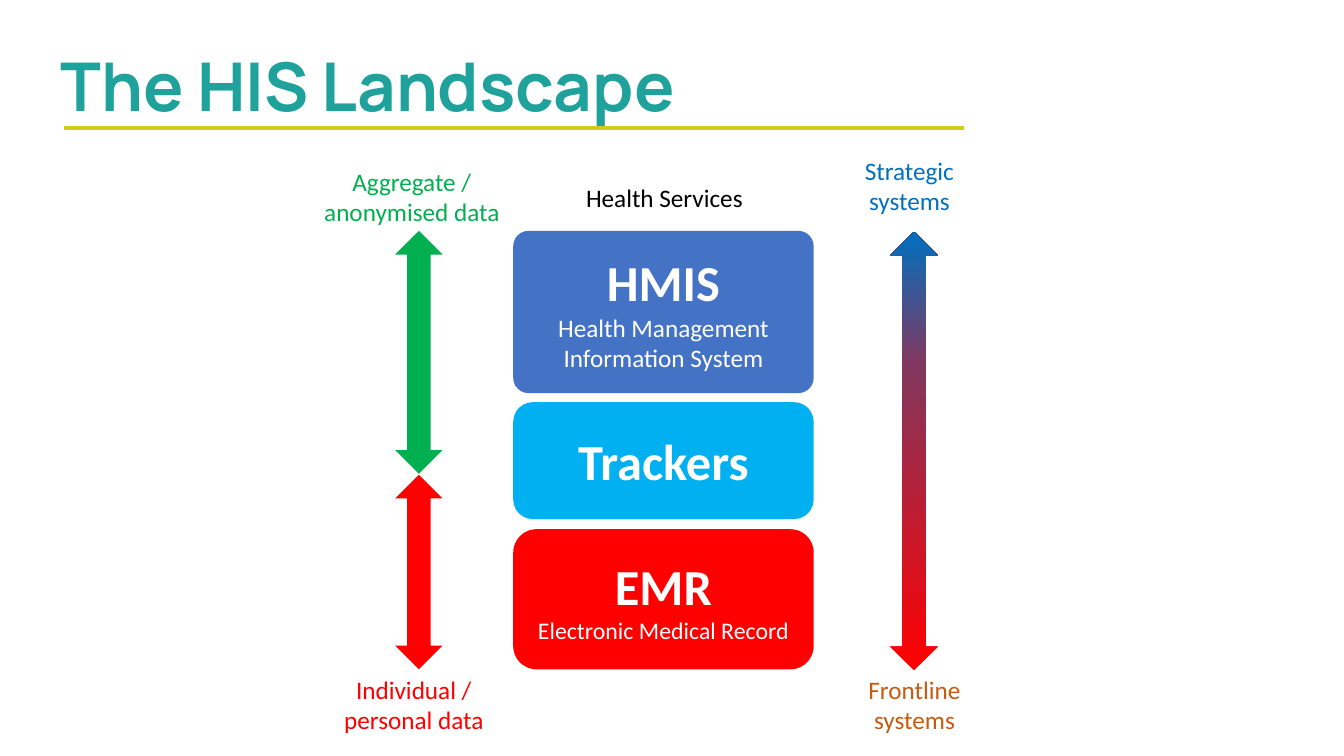
from copy import deepcopy

from lxml import etree
from pptx import Presentation
from pptx.dml.color import RGBColor
from pptx.enum.shapes import MSO_CONNECTOR, MSO_SHAPE
from pptx.enum.text import MSO_ANCHOR, MSO_AUTO_SIZE, PP_ALIGN
from pptx.oxml.ns import qn
from pptx.util import Emu, Pt

PX = 9144  # 100 px to the inch
TITLE_ONLY = 5
CARD, ARROW = MSO_SHAPE.ROUNDED_RECTANGLE, MSO_SHAPE.UP_DOWN_ARROW
STRAIGHT = MSO_CONNECTOR.STRAIGHT
TOP, MIDDLE = MSO_ANCHOR.TOP, MSO_ANCHOR.MIDDLE
LEFT, CENTER = PP_ALIGN.LEFT, PP_ALIGN.CENTER
FIXED, GROW = MSO_AUTO_SIZE.NONE, MSO_AUTO_SIZE.SHAPE_TO_FIT_TEXT

TEAL = RGBColor(0x1F, 0xA2, 0x9C)
OLIVE = RGBColor(0xD0, 0xCB, 0x17)
INDIGO = RGBColor(0x44, 0x72, 0xC4)
SKY = RGBColor(0x00, 0xB0, 0xF0)
RED = RGBColor(0xFF, 0x00, 0x00)
GREEN = RGBColor(0x00, 0xB0, 0x50)
BLUE = RGBColor(0x00, 0x70, 0xC0)
PLUM = RGBColor(0x80, 0x38, 0x60)
BROWN = RGBColor(0xC5, 0x5A, 0x11)
BLACK = RGBColor(0x00, 0x00, 0x00)
WHITE = RGBColor(0xFF, 0xFF, 0xFF)


def px(*lengths):
    return [Emu(length * PX) for length in lengths]


class LandscapeSlide:
    title_font, font = "Manrope", "Calibri"
    heading_size, label_size = 36, 18
    card_left, card_width, arrow_width = 509, 298, 47

    def __init__(self, slide):
        self.slide = slide
        self.shapes = slide.shapes

    def style(self, run, font, size, color, bold=False):
        run.font.name = font
        run.font.size = Pt(size)
        run.font.bold = bold
        run.font.color.rgb = color

    def title(self, text, left, top, width, height):
        heading = self.shapes.title
        heading.left, heading.top, heading.width, heading.height = px(left, top, width, height)
        frame = heading.text_frame
        frame.text = text
        frame.auto_size = FIXED
        frame.vertical_anchor = TOP
        paragraph = frame.paragraphs[0]
        paragraph.alignment = LEFT
        paragraph.line_spacing = 0.9
        paragraph.space_before = Pt(10)
        self.style(paragraph.runs[0], self.title_font, 48, TEAL, True)

    def rule(self, left, right, y):
        underline = self.shapes.add_connector(STRAIGHT, *px(left, y, right, y))
        underline.line.color.rgb = OLIVE
        underline.line.width = Pt(3.25)
        etree.SubElement(underline._element.spPr, qn("a:effectLst"))

    def label(self, text, left, top, width, height, color):
        caption = self.shapes.add_textbox(*px(left, top, width, height))
        frame = caption.text_frame
        frame.word_wrap = True
        frame.auto_size = GROW
        frame.text = text
        frame.paragraphs[0].alignment = CENTER
        self.style(frame.paragraphs[0].runs[0], self.font, self.label_size, color)

    def plain_shape(self, kind, left, top, width, height):
        shape = self.shapes.add_shape(kind, *px(left, top, width, height))
        shape.shadow.inherit = False
        shape.line.fill.background()
        return shape

    def card(self, text, top, height, color, detail_size=18, corner=0.1667):
        system = self.plain_shape(CARD, self.card_left, top, self.card_width, height)
        system.adjustments[0] = corner
        system.fill.solid()
        system.fill.fore_color.rgb = color
        frame = system.text_frame
        frame.text = text
        frame.vertical_anchor = MIDDLE
        for paragraph in frame.paragraphs:
            paragraph.alignment = CENTER
        name, *details = [run for paragraph in frame.paragraphs for run in paragraph.runs]
        self.style(name, self.font, self.heading_size, WHITE, True)
        for detail in details:
            self.style(detail, self.font, detail_size, WHITE)

    def arrow(self, left, top, height, color):
        span = self.plain_shape(ARROW, left, top, self.arrow_width, height)
        span.fill.solid()
        span.fill.fore_color.rgb = color

    def gradient_arrow(self, left, top, height, stops):
        span = self.plain_shape(ARROW, left, top, self.arrow_width, height)
        span.fill.gradient()
        span.fill.gradient_angle = 90
        stop_list = span._element.spPr.find(".//" + qn("a:gsLst"))
        while len(stop_list) < len(stops):
            stop_list.append(deepcopy(stop_list[-1]))
        for stop, (position, color) in zip(span.fill.gradient_stops, stops):
            stop.position = position
            stop.color.rgb = color


def main():
    deck = Presentation()
    deck.slide_width, deck.slide_height = px(1333, 750)
    landscape = LandscapeSlide(deck.slides.add_slide(deck.slide_layouts[TITLE_ONLY]))

    # Heading
    landscape.title("The HIS Landscape", 50, 48, 1147, 112)
    landscape.rule(63, 956, 127)

    # Health service systems
    landscape.label("Health Services", 510, 176, 298, 40, BLACK)
    landscape.card("HMIS\nHealth Management Information System", 229, 161, INDIGO, corner=0.094)
    landscape.card("Trackers", 399, 116, SKY)
    landscape.card("EMR\vElectronic Medical Record", 525, 139, RED, detail_size=17)

    # Kind of data
    landscape.label("Aggregate / anonymised data", 310, 160, 197, 71, GREEN)
    landscape.arrow(392, 229, 241, GREEN)
    landscape.arrow(392, 471, 193, RED)
    landscape.label("Individual / personal data", 312, 664, 197, 71, RED)

    # Level of use
    landscape.label("Strategic systems", 829, 149, 146, 71, BLUE)
    landscape.gradient_arrow(883, 230, 435, [(0, RED), (0.7, PLUM), (1, BLUE)])
    landscape.label("Frontline systems", 834, 664, 146, 71, BROWN)

    deck.save("out.pptx")


if __name__ == "__main__":
    main()
